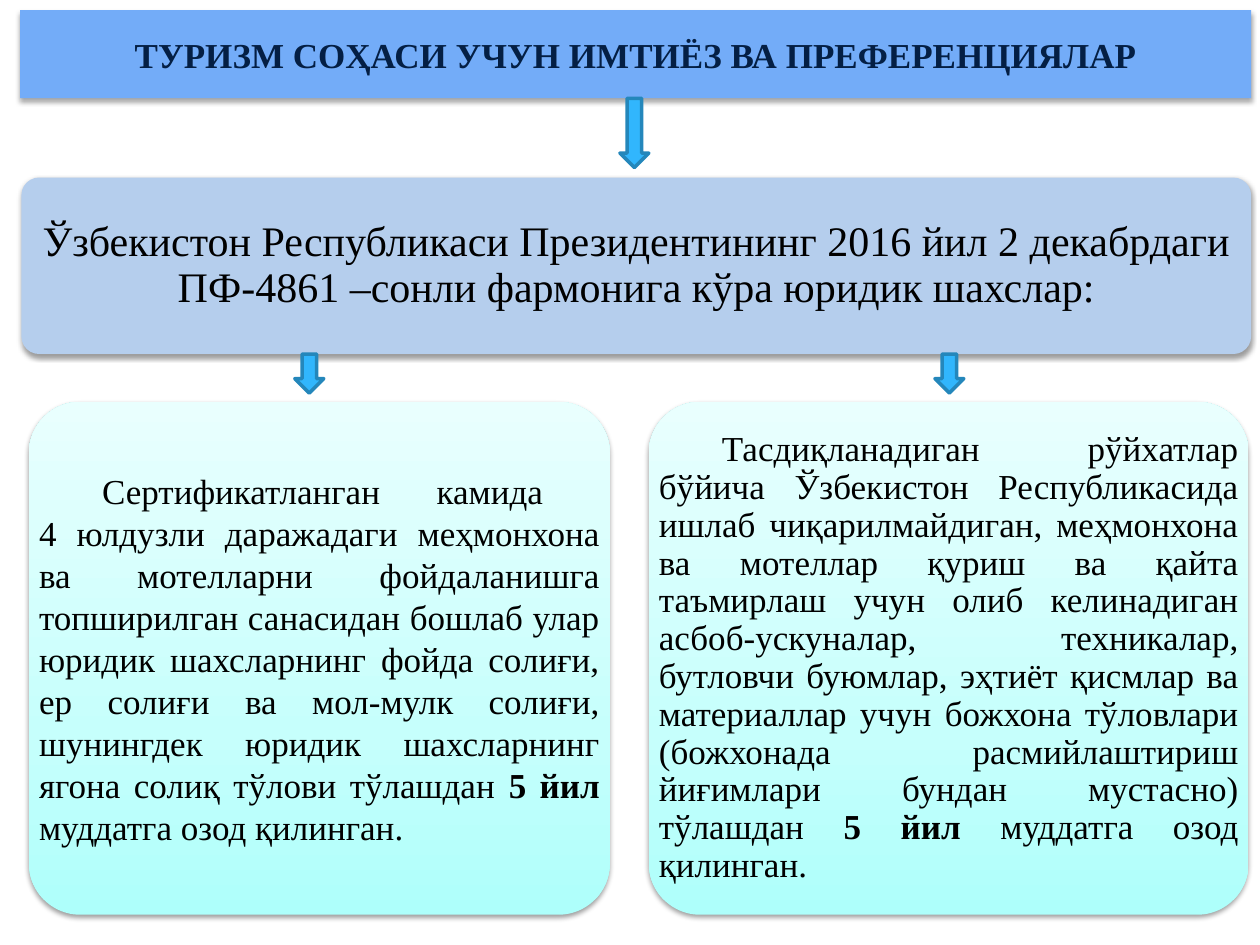
import copy

import pptx
import pptx.dml.color
import pptx.enum.shapes
import pptx.enum.text
import pptx.oxml
import pptx.oxml.ns
import pptx.util

PX = 9144  # EMU per px, 100 px to the inch
FONT = "Times New Roman"
COLORS = {
    "banner": "73ACF8", "heading": "041F44", "decree": "B5CEED",
    "arrow": "31B6FD", "arrow_edge": "2487BB", "text": "000000",
}
MINT = [(0, "AEFFFB"), (0.35, "C6FFFC"), (1, "E9FFFE")]
SHAPES = pptx.enum.shapes.MSO_SHAPE
ALIGN = pptx.enum.text.PP_ALIGN


def rgb(value):
    return pptx.dml.color.RGBColor.from_string(value)


class Builder:
    def __init__(self, slide):
        self.slide = slide

    def box(self, box):
        return [length * PX for length in box]

    def shadow(self, shape, alpha, distance):
        shape.shadow.inherit = False
        effects = shape._element.spPr.find(pptx.oxml.ns.qn("a:effectLst"))
        effects.append(pptx.oxml.parse_xml(
            f'<a:outerShdw {pptx.oxml.ns.nsdecls("a")} blurRad="{int(pptx.util.Pt(3.1))}" '
            f'dist="{int(pptx.util.Pt(distance))}" dir="5400000" rotWithShape="0">'
            f'<a:srgbClr val="000000"><a:alpha val="{alpha * 1000}"/></a:srgbClr>'
            '</a:outerShdw>'))

    def fill_text(self, frame, runs, size, color, align, spacing=1.0):
        frame.word_wrap = True
        frame.auto_size = pptx.enum.text.MSO_AUTO_SIZE.NONE
        frame.vertical_anchor = pptx.enum.text.MSO_ANCHOR.MIDDLE
        paragraph = frame.paragraphs[0]
        paragraph.alignment = align
        paragraph.line_spacing = spacing
        for text, bold in runs:
            for number, line in enumerate(text.split("\n")):
                if number:
                    paragraph.add_line_break()
                run = paragraph.add_run()
                run.text = line
                run.font.name = FONT
                run.font.size = pptx.util.Pt(size)
                run.font.bold = bold
                run.font.color.rgb = rgb(COLORS[color])

    def title(self, box, text):
        title = self.slide.shapes.title
        title.left, title.top, title.width, title.height = self.box(box)
        title.fill.solid()
        title.fill.fore_color.rgb = rgb(COLORS["banner"])
        self.shadow(title, 35, 1.8)
        self.fill_text(title.text_frame, [(text, True)], 20, "heading", ALIGN.CENTER)

    def card(self, box, color=None):
        card = self.slide.shapes.add_shape(SHAPES.ROUNDED_RECTANGLE, *self.box(box))
        card.adjustments[0] = 0.1
        card.line.fill.background()
        self.shadow(card, 38, 1.6)
        if color:
            card.fill.solid()
            card.fill.fore_color.rgb = rgb(COLORS[color])
        else:
            self.mint_gradient(card)

    def mint_gradient(self, card):
        card.fill.gradient()
        card.fill.gradient_angle = 90
        first = card._element.spPr.find(".//" + pptx.oxml.ns.qn("a:gs"))
        first.addnext(copy.deepcopy(first))
        for stop, (position, color) in zip(card.fill.gradient_stops, MINT):
            stop.position = position
            stop.color.rgb = rgb(color)

    def text(self, box, runs, size, align, inset, spacing=1.0):
        frame = self.slide.shapes.add_textbox(*self.box(box)).text_frame
        frame.margin_left = frame.margin_right = inset * PX
        frame.margin_top = frame.margin_bottom = inset * PX
        self.fill_text(frame, runs, size, "text", align, spacing)

    def arrow(self, left, top, height):
        arrow = self.slide.shapes.add_shape(
            SHAPES.DOWN_ARROW, *self.box((left, top, 23, height)))
        arrow.shadow.inherit = False
        arrow.fill.solid()
        arrow.fill.fore_color.rgb = rgb(COLORS["arrow"])
        arrow.line.color.rgb = rgb(COLORS["arrow_edge"])
        arrow.line.width = pptx.util.Pt(2)


def main():
    deck = pptx.Presentation()
    deck.slide_width, deck.slide_height = 1000 * PX, 750 * PX
    page = Builder(deck.slides.add_slide(deck.slide_layouts[5]))

    # Banner
    page.title((16, 8, 977, 70), "ТУРИЗМ СОҲАСИ УЧУН ИМТИЁЗ ВА ПРЕФЕРЕНЦИЯЛАР")

    # Decree
    decree = (17, 141, 976, 140)
    page.card(decree, "decree")
    page.text(decree, [(
        "Ўзбекистон Республикаси Президентининг 2016 йил 2 декабрдаги "
        "ПФ-4861 –сонли фармонига кўра юридик шахслар:", False)],
        24, ALIGN.CENTER, 10, 0.9)

    # Two tax benefits
    hotels = [
        ("\tСертификатланган камида \n4 юлдузли даражадаги меҳмонхона ва "
         "мотелларни фойдаланишга топширилган санасидан бошлаб улар юридик "
         "шахсларнинг фойда солиғи, ер солиғи ва мол-мулк солиғи, шунингдек "
         "юридик шахсларнинг ягона солиқ тўлови тўлашдан ", False),
        ("5 йил ", True),
        ("муддатга озод қилинган.", False),
    ]
    imports = [
        ("\tТасдиқланадиган рўйхатлар бўйича Ўзбекистон Республикасида ишлаб "
         "чиқарилмайдиган, меҳмонхона ва мотеллар қуриш ва қайта таъмирлаш "
         "учун олиб келинадиган асбоб-ускуналар, техникалар, бутловчи "
         "буюмлар, эҳтиёт қисмлар ва материаллар учун божхона тўловлари "
         "(божхонада расмийлаштириш йиғимлари бундан мустасно) тўлашдан ", False),
        ("5 йил ", True),
        ("муддатга озод қилинган.", False),
    ]
    for left, width, runs, spacing in ((23, 461, hotels, 1.0), (515, 476, imports, 0.9)):
        benefit = (left, 319, width, 407)
        page.card(benefit)
        page.text(benefit, runs, 20, ALIGN.JUSTIFY, 8, spacing)

    # Arrows from each level to the next
    for left, top, height in ((234, 281, 31), (742, 281, 31), (492, 78, 55)):
        page.arrow(left, top, height)

    deck.save("out.pptx")


if __name__ == "__main__":
    main()
